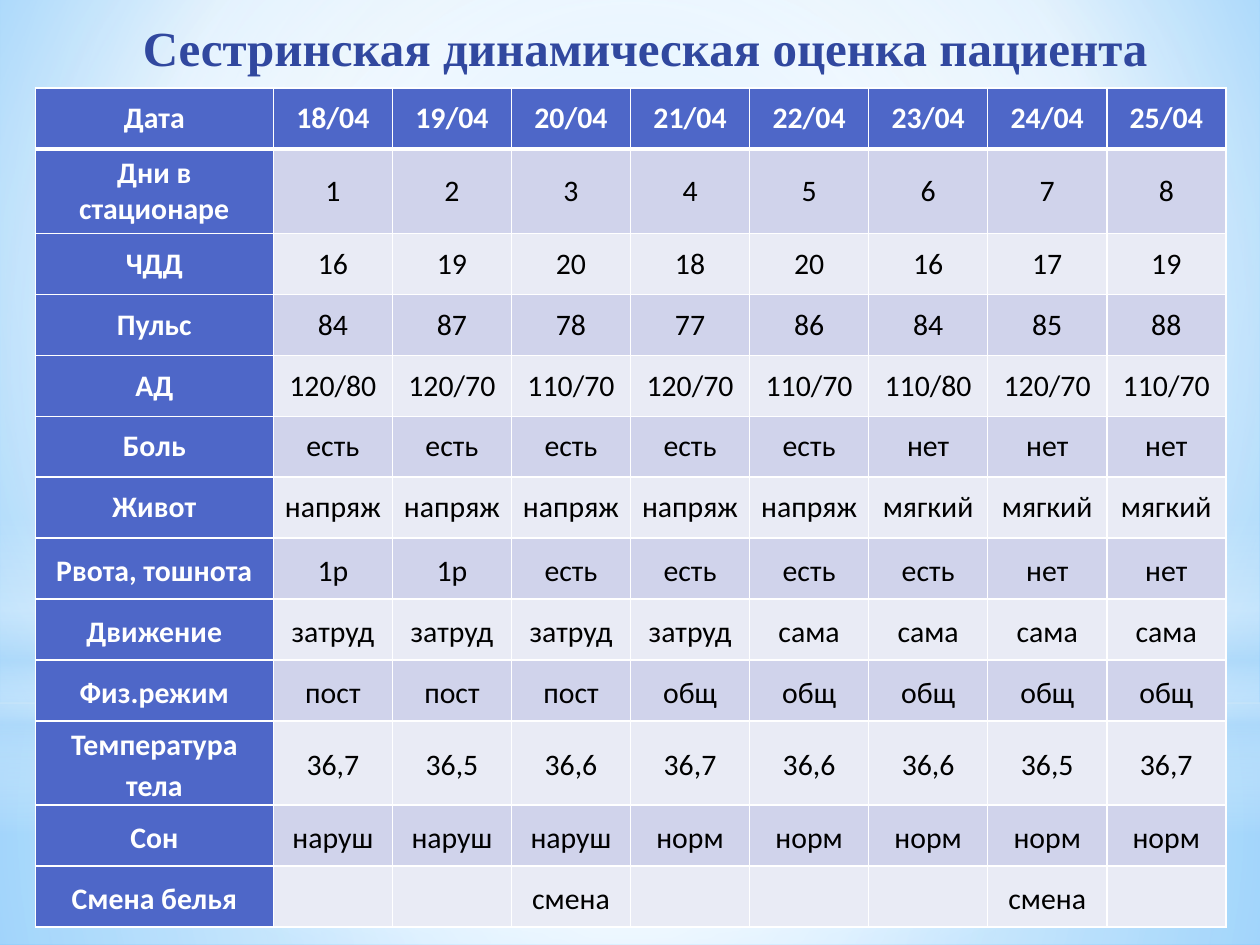
"""Build a slide with a table of daily nursing observations of a patient."""
import pptx
import pptx.dml.color
import pptx.enum.shapes
import pptx.enum.text
import pptx.oxml.ns
import pptx.util
from dataclasses import dataclass
from lxml import etree
from pptx.util import Inches


@dataclass(frozen=True)
class Theme:
    title_font: str = "Times New Roman"
    table_font: str = "Calibri"
    title_size: int = 28
    table_size: int = 17
    title: str = "31489F"
    header: str = "4E67C8"
    odd_band: str = "D0D3EB"
    even_band: str = "E9EBF5"
    white: str = "FFFFFF"
    black: str = "000000"
    sky: str = "B4DCFA"
    sky_center: str = "9ED5FF"
    sky_edge: str = "5BB9FF"


theme = Theme()
qn = pptx.oxml.ns.qn
rgb = pptx.dml.color.RGBColor.from_string


def paint_gradient(owner, fill, stops, focus=None):
    """Fill with a vertical gradient, or a circular one around the focus insets."""
    fill.gradient()
    gradient = next(owner.element.iter(qn("a:gradFill")))
    for child in list(gradient):
        gradient.remove(child)
    stop_list = etree.SubElement(gradient, qn("a:gsLst"))
    for position, color, opacity in stops:
        stop = etree.SubElement(stop_list, qn("a:gs"), pos=str(position * 1000))
        shade = etree.SubElement(stop, qn("a:srgbClr"), val=color)
        etree.SubElement(shade, qn("a:alpha"), val=str(opacity * 1000))
    if focus:
        circle = etree.SubElement(gradient, qn("a:path"), path="circle")
        insets = {side: str(inset * 1000) for side, inset in zip("ltrb", focus)}
        etree.SubElement(circle, qn("a:fillToRect"), insets)
    else:
        etree.SubElement(gradient, qn("a:lin"), ang="5400000", scaled="0")


def format_paragraph(paragraph, font, size, color, bold):
    paragraph.alignment = pptx.enum.text.PP_ALIGN.CENTER
    paragraph.font.name = font
    paragraph.font.size = pptx.util.Pt(size)
    paragraph.font.color.rgb = rgb(color)
    paragraph.font.bold = bold


deck = pptx.Presentation()
deck.slide_width, deck.slide_height = Inches(10), Inches(7.5)
page = deck.slides.add_slide(deck.slide_layouts[5])

sky_stops = [(0, theme.sky_center, 100), (60, theme.white, 100), (100, theme.sky_edge, 100)]
paint_gradient(page, page.background.fill, sky_stops, (20, 10, 20, 60))

shape_kinds = pptx.enum.shapes.MSO_SHAPE
center = (50, 50, 50, 50)
panels = [
    (shape_kinds.RECTANGLE, 5.58, 1.92, center,
     [(0, theme.white, 91), (37, theme.white, 76), (100, theme.sky, 79)]),
    (shape_kinds.RECTANGLE, 0, 5.58, center,
     [(0, theme.white, 89), (48, theme.white, 62), (100, theme.sky, 79)]),
    (shape_kinds.RECTANGLE, 4.12, 2.5, None,
     [(0, theme.white, 0), (29, theme.white, 30), (45, theme.sky, 40),
      (55, theme.white, 26), (65, theme.sky, 60), (100, theme.white, 0)]),
    (shape_kinds.OVAL, 1.75, 5.58, center,
     [(0, theme.white, 100), (56, theme.white, 0)]),
]
for kind, top, height, focus, stops in panels:
    panel = page.shapes.add_shape(kind, 0, Inches(top), deck.slide_width, Inches(height))
    panel.shadow.inherit = False
    panel.line.fill.background()
    paint_gradient(panel, panel.fill, stops, focus)

title = page.shapes.title
title.element.getparent().append(title.element)
title.left, title.top = Inches(0.62), Inches(0.07)
title.width, title.height = Inches(9), Inches(0.61)
title.text_frame.text = "Сестринская динамическая оценка пациента"
title.text_frame.vertical_anchor = pptx.enum.text.MSO_ANCHOR.MIDDLE
format_paragraph(title.text_frame.paragraphs[0], theme.title_font, theme.title_size,
                 theme.title, True)

observations = [
    ["Дата", *(f"{day}/04" for day in range(18, 26))],
    ["Дни в стационаре", *map(str, range(1, 9))],
    ["ЧДД", "16", "19", "20", "18", "20", "16", "17", "19"],
    ["Пульс", "84", "87", "78", "77", "86", "84", "85", "88"],
    ["АД", "120/80", "120/70", "110/70", "120/70", "110/70", "110/80", "120/70", "110/70"],
    ["Боль", *["есть"] * 5, *["нет"] * 3],
    ["Живот", *["напряж"] * 5, *["мягкий"] * 3],
    ["Рвота, тошнота", *["1р"] * 2, *["есть"] * 4, *["нет"] * 2],
    ["Движение", *["затруд"] * 4, *["сама"] * 4],
    ["Физ.режим", *["пост"] * 3, *["общ"] * 5],
    ["Температура тела", "36,7", "36,5", "36,6", "36,7", "36,6", "36,6", "36,5", "36,7"],
    ["Сон", *["наруш"] * 3, *["норм"] * 5],
    ["Смена белья", "", "", "смена", "", "", "", "смена", ""],
]
table_width, table_height = 9.45, 6.66
tall_rows, tall_height = (1, 10), 0.67
first_loose_row = 7
column_width = table_width / 10
row_height = (table_height - tall_height * len(tall_rows)) / (len(observations) - len(tall_rows))

frame = page.shapes.add_table(len(observations), len(observations[0]), Inches(0.28), Inches(0.7),
                              Inches(table_width), Inches(table_height))
table = frame.table
table.first_row = table.horz_banding = False
for index, column in enumerate(table.columns):
    column.width = Inches(column_width * (2 if index == 0 else 1))

for row_index, values in enumerate(observations):
    table.rows[row_index].height = Inches(tall_height if row_index in tall_rows else row_height)
    band = theme.odd_band if row_index % 2 else theme.even_band
    for column_index, value in enumerate(values):
        is_header = row_index == 0 or column_index == 0
        cell = table.cell(row_index, column_index)
        cell.text = value
        cell.vertical_anchor = pptx.enum.text.MSO_ANCHOR.MIDDLE
        cell.margin_left = cell.margin_right = Inches(0.07)
        cell.margin_top = cell.margin_bottom = 0
        paragraph = cell.text_frame.paragraphs[0]
        format_paragraph(paragraph, theme.table_font, theme.table_size,
                         theme.white if is_header else theme.black, is_header)
        if row_index >= first_loose_row:
            paragraph.line_spacing = 1.15
        properties = cell._tc.get_or_add_tcPr()
        for side in "LRTB":
            is_thick = (row_index, side) in [(0, "B"), (1, "T")]
            width = pptx.util.Pt(3 if is_thick else 1)
            border = etree.SubElement(properties, qn(f"a:ln{side}"), w=str(width))
            border_fill = etree.SubElement(border, qn("a:solidFill"))
            etree.SubElement(border_fill, qn("a:srgbClr"), val=theme.white)
        cell.fill.solid()
        cell.fill.fore_color.rgb = rgb(theme.header if is_header else band)

deck.save("out.pptx")
